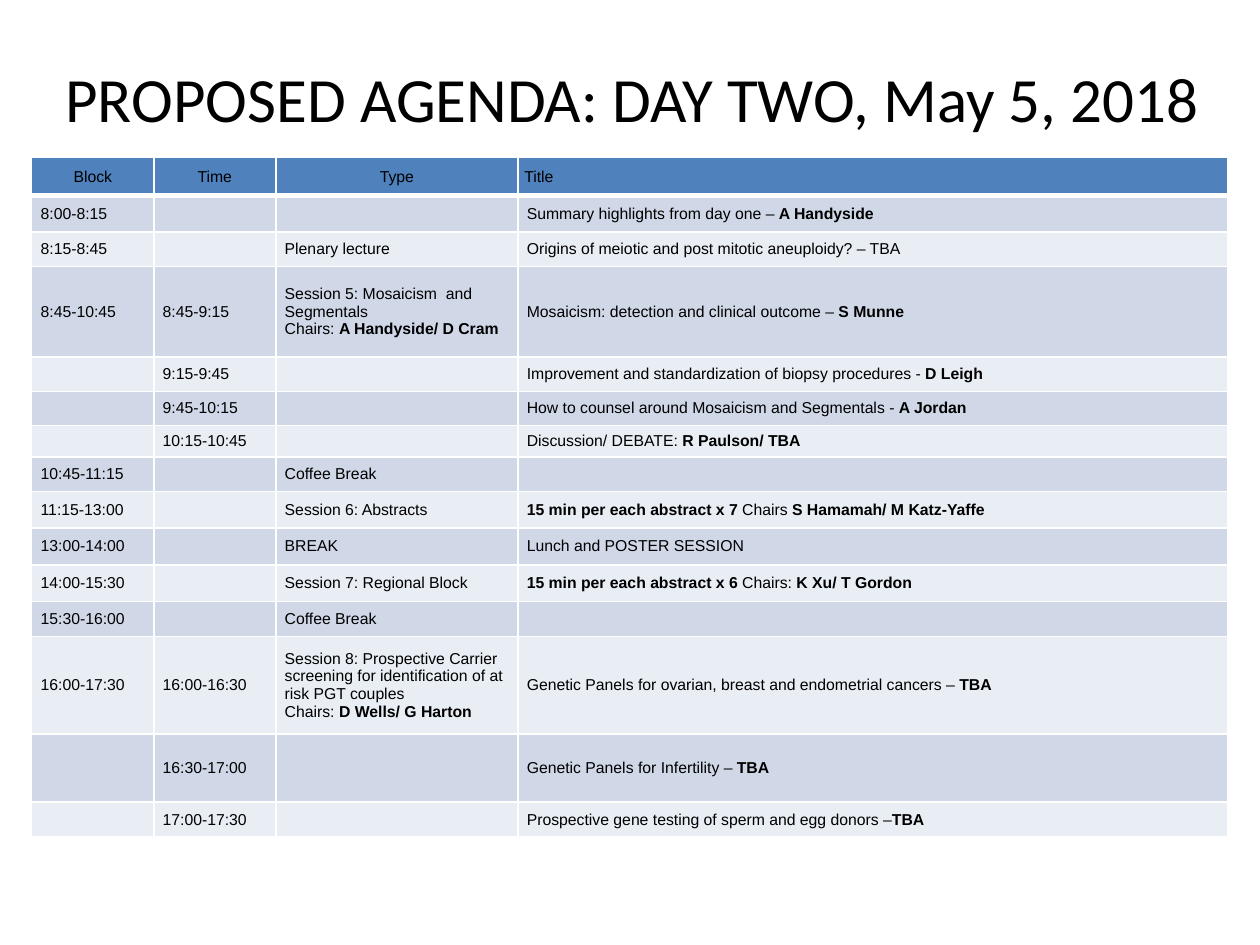
from dataclasses import dataclass

from lxml.etree import SubElement
from pptx import Presentation
from pptx.dml.color import RGBColor
from pptx.enum.text import MSO_ANCHOR, PP_ALIGN
from pptx.oxml.ns import qn
from pptx.util import Cm, Pt


@dataclass(frozen=True)
class Theme:
    ink: str = "000000"
    line: str = "FFFFFF"
    head: str = "4F81BD"
    bands: tuple = ("D0D8E8", "E9EDF4")
    title_font: str = "Calibri"
    cell_font: str = "Arial"
    title_size: int = 36
    cell_size: int = 9


# Asterisks enclose bold text; a line break starts a new paragraph.
HEAD = ("Block", "Time", "Type", "Title")
AGENDA = [
    ("8:00-8:15", "", "", "Summary highlights from day one – *A Handyside*"),
    ("8:15-8:45", "", "Plenary lecture",
     "Origins of meiotic and post mitotic aneuploidy? – TBA"),
    ("8:45-10:45", "8:45-9:15",
     "Session 5: Mosaicism  and Segmentals\nChairs: *A Handyside/ D Cram*",
     "Mosaicism: detection and clinical outcome – *S Munne*"),
    ("", "9:15-9:45", "",
     "Improvement and standardization of biopsy procedures - *D Leigh*"),
    ("", "9:45-10:15", "",
     "How to counsel around Mosaicism and Segmentals - *A Jordan*"),
    ("", "10:15-10:45", "", "Discussion/ DEBATE: *R Paulson/ TBA*"),
    ("10:45-11:15", "", "Coffee Break", ""),
    ("11:15-13:00", "", "Session 6: Abstracts",
     "*15 min per each abstract x 7 *Chairs *S Hamamah/ M Katz-Yaffe*"),
    ("13:00-14:00", "", "BREAK", "Lunch and POSTER SESSION"),
    ("14:00-15:30", "", "Session 7: Regional Block",
     "*15 min per each abstract x 6 *Chairs: *K Xu/ T Gordon*"),
    ("15:30-16:00", "", "Coffee Break", ""),
    ("16:00-17:30", "16:00-16:30",
     "Session 8: Prospective Carrier screening for identification of at risk "
     "PGT couples\nChairs: *D Wells/ G Harton*",
     "Genetic Panels for ovarian, breast and endometrial cancers – *TBA*"),
    ("", "16:30-17:00", "", "Genetic Panels for Infertility – *TBA*"),
    ("", "17:00-17:30", "",
     "Prospective gene testing of sperm and egg donors –*TBA*"),
]
COLS = (2.46, 2.46, 4.88, 14.3)
ROWS = (0.76, 0.74, 0.69, 1.83, 0.69, 0.69, 0.64, 0.69,
        0.74, 0.74, 0.74, 0.71, 1.96, 1.37, 0.71)


class Deck:
    def __init__(self, theme):
        self.theme = theme
        self.file = Presentation()
        self.file.slide_width, self.file.slide_height = Cm(25.4), Cm(19.05)
        self.slide = self.file.slides.add_slide(self.file.slide_layouts[6])

    def style(self, para, face, size):
        font = para.font
        font.name, font.size = face, Pt(size)
        font.color.rgb = RGBColor.from_string(self.theme.ink)

    def title(self, text, left, top, width, height):
        box = self.slide.shapes.add_textbox(
            Cm(left), Cm(top), Cm(width), Cm(height))
        frame = box.text_frame
        frame.word_wrap = True
        frame.text = text
        self.style(frame.paragraphs[0], self.theme.title_font,
                   self.theme.title_size)

    def table(self, head, body, left, top, cols, rows):
        grid = self.slide.shapes.add_table(
            len(rows), len(cols), Cm(left), Cm(top),
            Cm(sum(cols)), Cm(sum(rows))).table
        for col, width in zip(grid.columns, cols):
            col.width = Cm(width)
        for row, height in zip(grid.rows, rows):
            row.height = Cm(height)
        for y, texts in enumerate([head, *body]):
            for x, text in enumerate(texts):
                cell = grid.cell(y, x)
                if y == 0:
                    self.cell(cell, text, self.theme.head, 0.13, 0.13, 3)
                    if x < len(cols) - 1:
                        cell.text_frame.paragraphs[0].alignment = PP_ALIGN.CENTER
                else:
                    self.cell(cell, text, self.theme.bands[(y - 1) % 2],
                              0.18, 0, 1)

    def cell(self, cell, text, fill, side, edge, base):
        """Fill one cell; base is the weight of its bottom border."""
        cell.margin_left = cell.margin_right = Cm(side)
        cell.margin_top = cell.margin_bottom = Cm(edge)
        cell.vertical_anchor = MSO_ANCHOR.MIDDLE
        self.borders(cell, base)
        cell.fill.solid()
        cell.fill.fore_color.rgb = RGBColor.from_string(fill)
        frame = cell.text_frame
        for i, line in enumerate(text.split("\n")):
            para = frame.add_paragraph() if i else frame.paragraphs[0]
            self.style(para, self.theme.cell_font, self.theme.cell_size)
            for j, part in enumerate(line.split("*")):
                if part:
                    run = para.add_run()
                    run.text = part
                    if j % 2:
                        run.font.bold = True

    def borders(self, cell, base):
        props = cell._tc.get_or_add_tcPr()
        for side, weight in zip("LRTB", (1, 1, 1, base)):
            line = SubElement(props, qn(f"a:ln{side}"), w=str(Pt(weight)))
            paint = SubElement(line, qn("a:solidFill"))
            SubElement(paint, qn("a:srgbClr"), val=self.theme.line)

    def save(self):
        self.file.save("out.pptx")


def main():
    deck = Deck(Theme())
    deck.table(HEAD, AGENDA, 0.64, 3.18, COLS, ROWS)
    deck.title("PROPOSED AGENDA: DAY TWO, May 5, 2018", 1.07, 1.07, 24.33, 1.8)
    deck.save()


if __name__ == "__main__":
    main()
